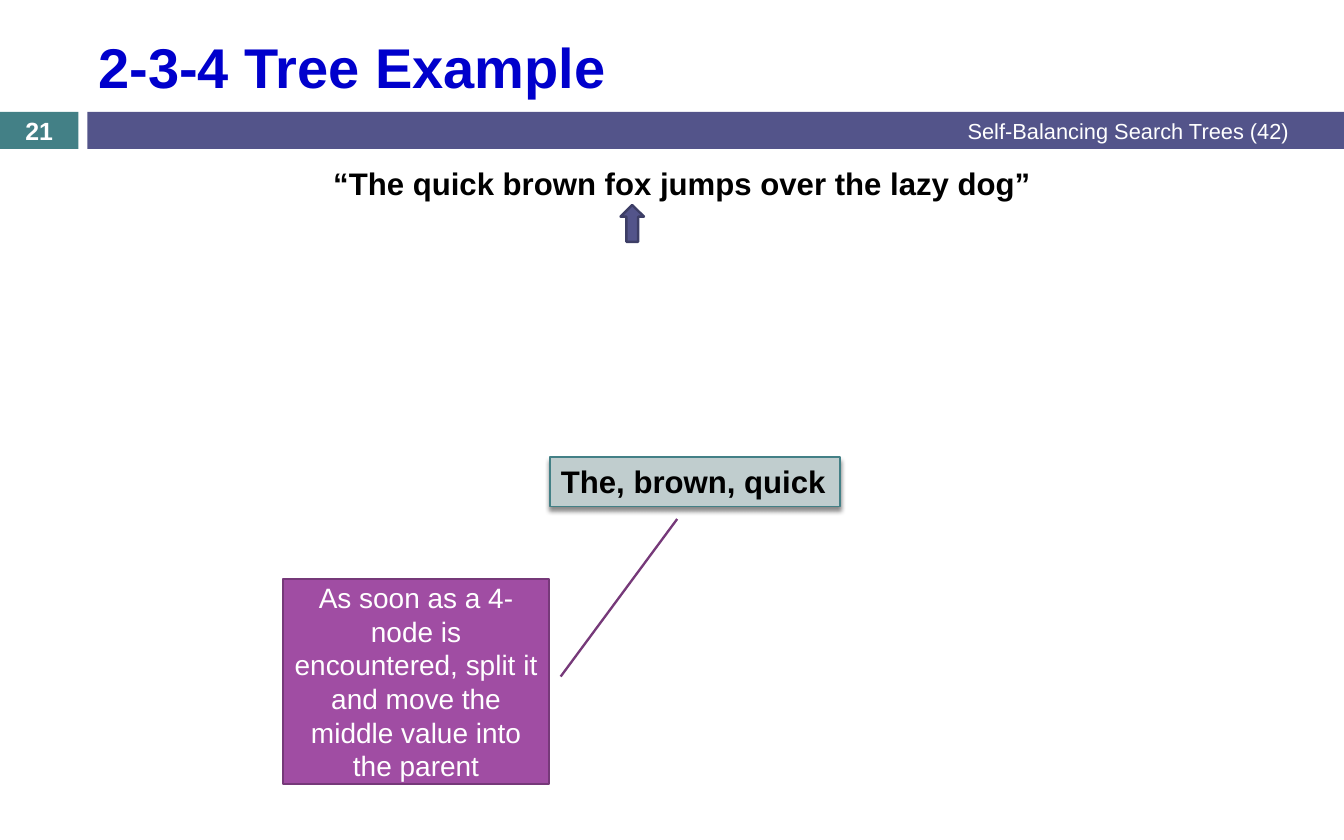
from lxml import etree
from pptx import Presentation
from pptx.dml.color import RGBColor
from pptx.enum.shapes import MSO_SHAPE as SHAPE
from pptx.enum.text import MSO_ANCHOR as ANCHOR, PP_ALIGN as ALIGN
from pptx.oxml.ns import qn
from pptx.util import Inches, Pt

FONT = "Arial"
COLORS = {
    "white": "FFFFFF", "black": "000000", "title": "0000CC",
    "teal": "438086", "indigo": "53548A", "indigo_dark": "3D3E66",
    "node": "C0CDCE", "purple": "A04DA3", "purple_dark": "763979",
}

# Boxes: left, top, width, height
NUMBER_BOX = (0, 1, 0.7, 0.33)
BAND_BOX = (0.78, 1, 11.22, 0.33)
NODE_BOX = (4.91, 4.08, 2.59, 0.44)
CALLOUT_BOX = (2.53, 5.17, 2.37, 1.83)
ARROW_BOX = (5.54, 1.83, 0.21, 0.33)
CALLOUT_LINE = (0.476, 1.045, -0.293, 1.484)  # y, x of start; y, x of end

NODE = "The, brown, quick"
CALLOUT = ("As soon as a 4-node is encountered, split it "
           "and move the middle value into the parent")

# Text boxes: box, text, size, color, bold, alignment, anchor
TEXTS = [
    ((4.5, 0.99, 7.11, 0.35), "Self-Balancing Search Trees (42)",
     14, "white", False, ALIGN.RIGHT, ANCHOR.MIDDLE),
    (NUMBER_BOX, "21", 16, "white", True, ALIGN.CENTER, ANCHOR.MIDDLE),
    ((1.67, 1.42, 8.92, 0.5), "“The quick brown fox jumps over the lazy dog” ",
     20, "black", True, ALIGN.CENTER, ANCHOR.TOP),
    ((0.78, 0.19, 10.7, 0.8), "2-3-4 Tree Example",
     36, "title", True, ALIGN.LEFT, ANCHOR.MIDDLE),
]


def rgb(name):
    return RGBColor.from_string(COLORS[name])


def write(s, text, size, color, bold, align, anchor):
    tf = s.text_frame
    tf.word_wrap = True
    tf.vertical_anchor = anchor
    p = tf.paragraphs[0]
    p.alignment = align
    r = p.add_run()
    r.text = text
    r.font.name = FONT
    r.font.size = Pt(size)
    r.font.bold = bold
    r.font.color.rgb = rgb(color)


def add_shape(slide, kind, box, fill, line=None, width=1.5):
    s = slide.shapes.add_shape(kind, *map(Inches, box))
    s.shadow.inherit = False
    s.fill.solid()
    s.fill.fore_color.rgb = rgb(fill)
    if line:
        s.line.color.rgb = rgb(line)
        s.line.width = Pt(width)
    else:
        s.line.fill.background()
    return s


def add_shadow(s, blur, dist, alpha):
    effects = s._element.spPr.find(qn("a:effectLst"))
    shadow = etree.SubElement(
        effects, qn("a:outerShdw"), blurRad=str(Pt(blur)), dist=str(Pt(dist)),
        dir="5400000", algn="ctr", rotWithShape="0")
    color = etree.SubElement(shadow, qn("a:srgbClr"), val=COLORS["black"])
    etree.SubElement(color, qn("a:alpha"), val=str(alpha * 1000))


def main():
    prs = Presentation()
    prs.slide_width, prs.slide_height = Inches(12), Inches(7.5)
    slide = prs.slides.add_slide(prs.slide_layouts[6])

    # Header band
    add_shape(slide, SHAPE.RECTANGLE, NUMBER_BOX, "teal")
    add_shape(slide, SHAPE.RECTANGLE, BAND_BOX, "indigo")

    # Tree node
    node = add_shape(slide, SHAPE.RECTANGLE, NODE_BOX, "node", "teal", 0.79)
    add_shadow(node, 3, 2.4, 45)
    write(node, NODE, 20, "black", True, ALIGN.LEFT, ANCHOR.TOP)

    # Title, header texts and sentence
    for box, *content in TEXTS:
        write(slide.shapes.add_textbox(*map(Inches, box)), *content)

    # Callout pointing at the node
    callout = add_shape(slide, SHAPE.LINE_CALLOUT_1, CALLOUT_BOX,
                        "purple", "purple_dark")
    for i, value in enumerate(CALLOUT_LINE):
        callout.adjustments[i] = value
    write(callout, CALLOUT, 18, "white", False, ALIGN.CENTER, ANCHOR.MIDDLE)

    # Marker under the current word
    add_shape(slide, SHAPE.UP_ARROW, ARROW_BOX, "indigo", "indigo_dark")

    prs.save("out.pptx")


if __name__ == "__main__":
    main()
